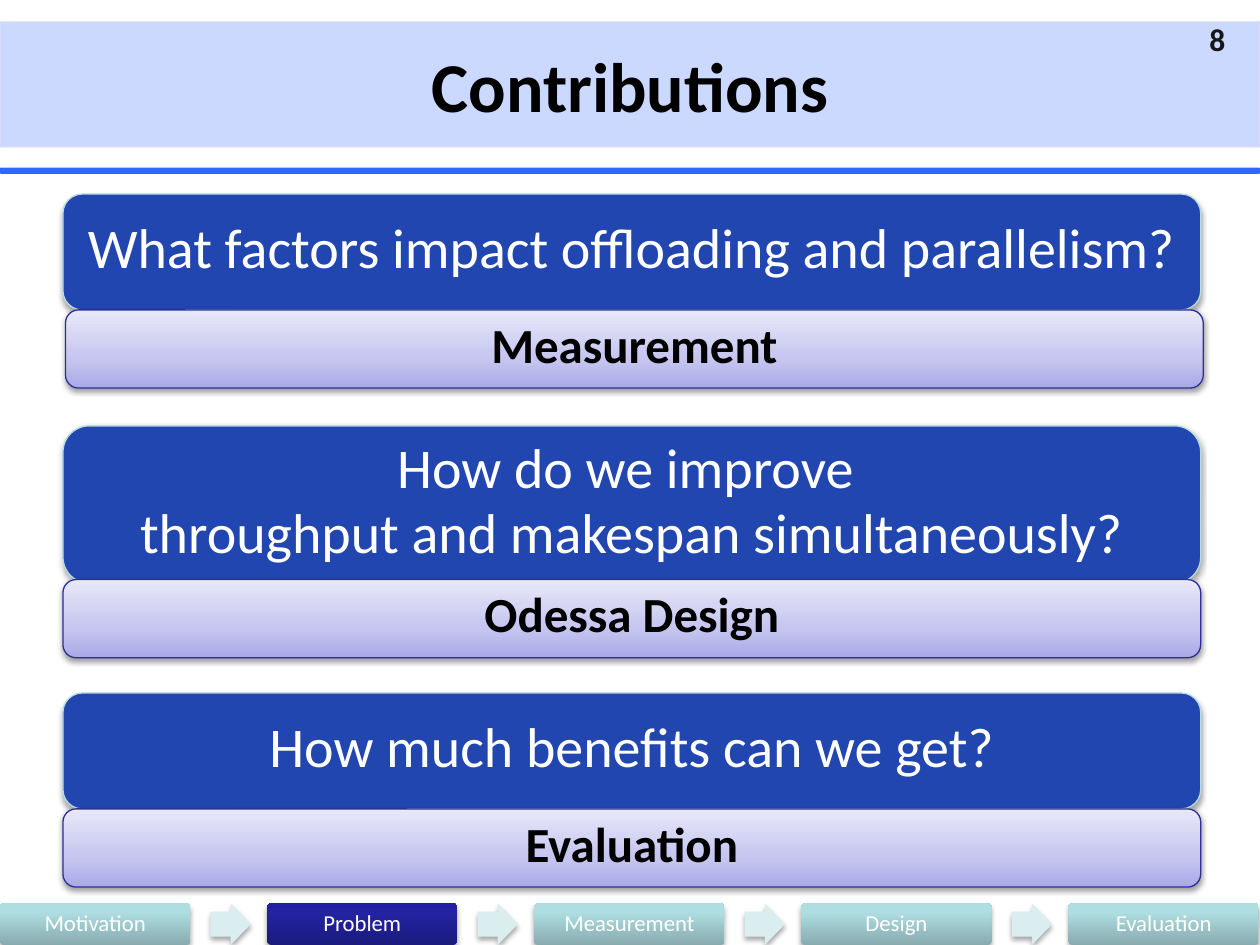
from lxml.etree import SubElement
from pptx import Presentation
from pptx.dml.color import RGBColor as RGB
from pptx.enum.shapes import MSO_SHAPE as Shape
from pptx.enum.text import MSO_ANCHOR as Anchor, PP_ALIGN as Align
from pptx.oxml.ns import qn
from pptx.util import Inches, Pt

W, H = 10, 7.5
C = {
    "white": "FFFFFF", "black": "000000", "number": "161616",
    "rule": "3366FF", "band_line": "FFE4E5",
    "question": "2246B0", "question_line": "B6DCDF",
    "answer_line": "2F2F98", "arrow": "DAEDEF",
}
LILAC = [(0, "A9A9E9"), (35, "C4C4EF"), (100, "E8E8FA")]
TEAL = [(0, "87ABAE"), (80, "AFDEE2"), (100, "AFE0E4")]
NAVY = [(0, "1B1B7E"), (80, "2323A3"), (100, "2020A6")]


def set_alpha(color, percent):
    SubElement(color, qn("a:alpha"), val=str(percent * 1000))


def add_shadow(sp, alpha, dist):
    effects = sp._element.spPr.find(qn("a:effectLst"))
    outer = SubElement(effects, qn("a:outerShdw"), blurRad=str(Pt(3.1)),
                       dist=str(Pt(dist)), dir="5400000", rotWithShape="0")
    set_alpha(SubElement(outer, qn("a:srgbClr"), val=C["black"]), alpha)


def set_gradient(sp, stops):
    sp.fill.gradient()
    sp.fill.gradient_angle = 90
    gs_list = sp._element.spPr.find(".//" + qn("a:gsLst"))
    for gs in list(gs_list):
        gs_list.remove(gs)
    for pos, color in stops:
        gs = SubElement(gs_list, qn("a:gs"), pos=str(pos * 1000))
        SubElement(gs, qn("a:srgbClr"), val=color)


def add_box(shapes, kind, box, fill, line=None, width=0.75, adj=()):
    sp = shapes.add_shape(kind, *map(Inches, box))
    for i, value in enumerate(adj):
        sp.adjustments[i] = value
    if isinstance(fill, list):
        set_gradient(sp, fill)
    else:
        sp.fill.solid()
        sp.fill.fore_color.rgb = RGB.from_string(fill)
    if line:
        sp.line.color.rgb = RGB.from_string(line)
        sp.line.width = Pt(width)
    else:
        sp.line.fill.background()
    sp.shadow.inherit = False
    return sp


def write(sp, lines, size, color, bold=False, spacing=0.8, align=Align.CENTER):
    tf = sp.text_frame
    tf.word_wrap = True
    tf.vertical_anchor = Anchor.MIDDLE
    for i, line in enumerate(lines):
        p = tf.paragraphs[0] if i == 0 else tf.add_paragraph()
        p.alignment = align
        p.line_spacing = spacing
        if i:
            p.space_before = Pt(size * 0.2)
        r = p.add_run()
        r.text = line
        r.font.name = "Calibri"
        r.font.size = Pt(size)
        r.font.bold = bold
        r.font.color.rgb = RGB.from_string(color)


def add_header(slide, box, title, number):
    x, y, w, h = box
    add_box(slide.shapes, Shape.ROUNDED_RECTANGLE,
            (x, y + 1.16 * h, w, 0.05 * h), C["rule"])
    band = add_box(slide.shapes, Shape.RECTANGLE, box, C["rule"], C["band_line"], 1)
    for (color, alpha) in zip(band._element.spPr.iter(qn("a:srgbClr")), (25, 30)):
        set_alpha(color, alpha)
    write(band, [title], 40, C["black"], True, 1)
    corner = slide.shapes.add_textbox(
        *map(Inches, (x + 0.95 * w, y, 0.05 * w, h / 3)))
    write(corner, [number], 18, C["number"], True, align=Align.LEFT)


def add_contribution(slide, box, question, answer, answer_top, shift=0):
    x, _, w, _ = box
    top = add_box(slide.shapes, Shape.ROUNDED_RECTANGLE, box,
                  C["question"], C["question_line"])
    add_shadow(top, 35, 1.8)
    write(top, question, 32, C["white"])
    bottom = add_box(slide.shapes, Shape.ROUNDED_RECTANGLE,
                     (x + shift, answer_top, w, 0.62), LILAC, C["answer_line"])
    add_shadow(bottom, 38, 1.6)
    write(bottom, [answer], 28, C["black"], True)


def add_progress(slide, box, steps, current):
    x, y, w, h = box
    pitch = 0.212 * w
    shapes = slide.shapes.add_group_shape().shapes
    for i, step in enumerate(steps):
        left = x + i * pitch
        tab = add_box(shapes, Shape.ROUNDED_RECTANGLE, (left, y, 0.151 * w, h),
                      NAVY if step == current else TEAL, adj=[0.1])
        add_shadow(tab, 35, 1.8)
        tf = tab.text_frame
        tf.margin_left = tf.margin_right = Inches(0.06)
        tf.margin_top = tf.margin_bottom = Inches(0.06)
        write(tab, [step], 13, C["white"], spacing=0.9)
        if i < len(steps) - 1:
            arrow = add_box(shapes, Shape.RIGHT_ARROW,
                            (left + 0.167 * w, y, 0.032 * w, h),
                            C["arrow"], adj=[0.6, 0.5])
            add_shadow(arrow, 35, 1.8)


def main():
    prs = Presentation()
    prs.slide_width, prs.slide_height = Inches(W), Inches(H)
    slide = prs.slides.add_slide(prs.slide_layouts[6])
    add_header(slide, (0, 0.17, W, 1), "Contributions", "8")
    left, width = 0.05 * W, 0.903 * W
    contributions = [
        (1.54, 0.92, ["What factors impact offloading and parallelism?"],
         "Measurement", 2.46, 0.02),
        (3.38, 1.25, ["How do we improve ", "throughput and makespan simultaneously?"],
         "Odessa Design", 4.6, 0),
        (5.5, 0.92, ["How much benefits can we get?"], "Evaluation", 6.42, 0),
    ]
    for top, height, *content in contributions:
        add_contribution(slide, (left, top, width, height), *content)
    add_progress(slide, (0, 7.17, W, 0.33),
                 ["Motivation", "Problem", "Measurement", "Design", "Evaluation"],
                 "Problem")
    prs.save("out.pptx")


if __name__ == "__main__":
    main()
